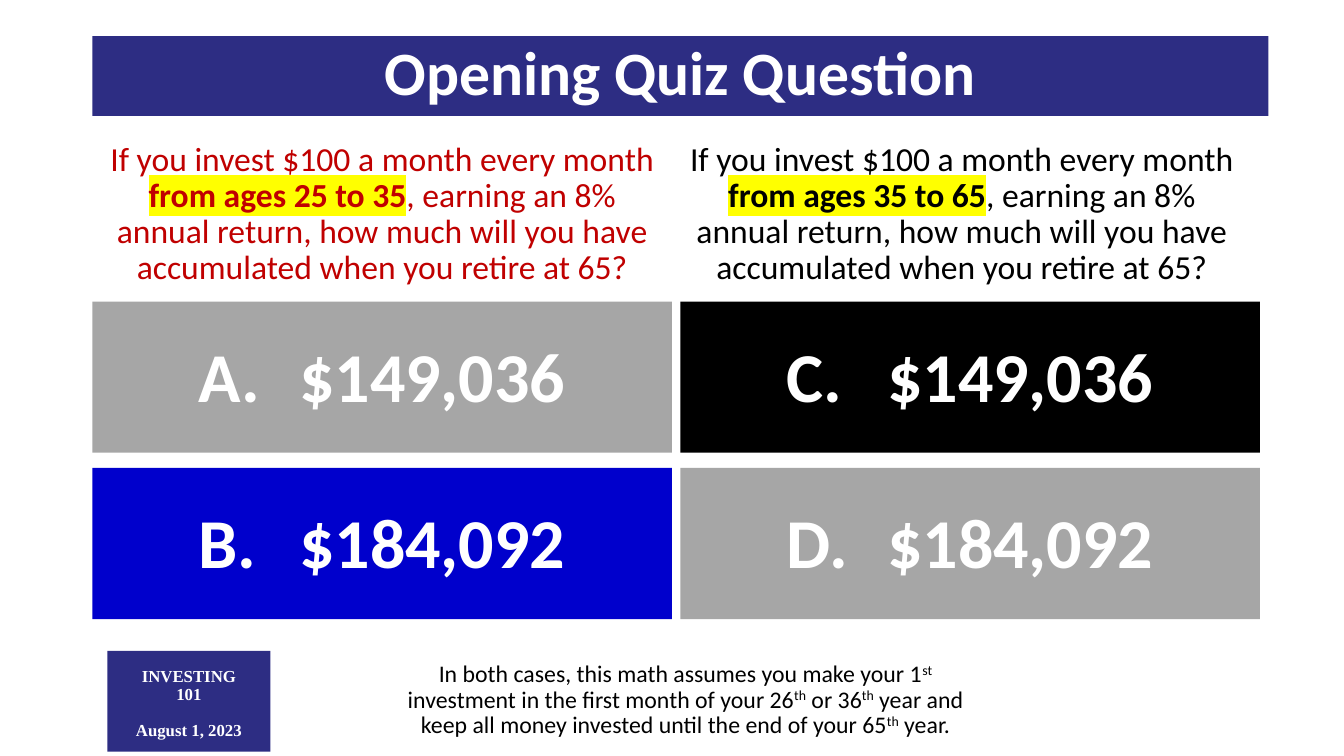
"""Build the opening quiz slide of an investing class."""
from dataclasses import dataclass

from lxml import etree
from pptx import Presentation
from pptx.dml.color import RGBColor
from pptx.enum.shapes import MSO_SHAPE
from pptx.enum.text import MSO_ANCHOR, MSO_AUTO_SIZE, PP_ALIGN
from pptx.oxml.ns import qn
from pptx.shapes.base import BaseShape
from pptx.slide import Slide
from pptx.text.text import _Paragraph
from pptx.util import Inches, Pt

RECT = MSO_SHAPE.RECTANGLE
TOP, MIDDLE = MSO_ANCHOR.TOP, MSO_ANCHOR.MIDDLE
CENTER = PP_ALIGN.CENTER
FIXED = MSO_AUTO_SIZE.NONE
COLS, ROWS = 160, 90
CELL = Inches(1) / 12


@dataclass(frozen=True)
class Theme:
    navy: str = "2D2D83"
    blue: str = "0000CC"
    gray: str = "A6A6A6"
    black: str = "000000"
    white: str = "FFFFFF"
    red: str = "C00000"
    glow: str = "FFFF00"
    sans: str = "Calibri"
    serif: str = "Times New Roman"
    title: int = 44
    answer: int = 50
    body: int = 24
    note: int = 17
    badge: int = 12


THEME = Theme()


@dataclass(frozen=True)
class Box:
    col: float
    row: float
    wide: float
    high: float


@dataclass(frozen=True)
class Style:
    size: int
    color: str
    bold: bool = False
    font: str = THEME.sans
    raised: bool = False


@dataclass(frozen=True)
class Query:
    ages: str
    color: str
    box: Box


@dataclass(frozen=True)
class Answer:
    text: str
    fill: str


QUERIES = (
    Query("25 to 35", THEME.red, Box(11, 16.3, 69, 64.8)),
    Query("35 to 65", THEME.black, Box(80, 16.3, 69, 64.8)),
)
ANSWERS = (
    Answer("A.\t$149,036", THEME.gray),
    Answer("B.\t$184,092", THEME.blue),
    Answer("C.\t$149,036", THEME.black),
    Answer("D.\t$184,092", THEME.gray),
)
FIRST = Box(11, 35.9, 69, 18)
STEP_X, STEP_Y = 70, 19.8
ASK = ("If you invest $100 a month every month |from ages {}|, earning an 8% "
       "annual return, how much will you have accumulated when you retire at 65?")
NOTE = ("In both cases, this math assumes you make your 1|st| investment in the "
        "first month of your 26|th| or 36|th| year and keep all money invested "
        "until the end of your 65|th| year.")


def cells(count: float) -> int:
    return round(count * CELL)


def place(shape: BaseShape, box: Box) -> None:
    shape.left, shape.top = cells(box.col), cells(box.row)
    shape.width, shape.height = cells(box.wide), cells(box.high)


def paint(shape: BaseShape, color: str) -> None:
    shape.fill.solid()
    shape.fill.fore_color.rgb = RGBColor.from_string(color)
    shape.line.fill.background()


def fill_line(para: _Paragraph, text: str, style: Style) -> None:
    para.alignment = CENTER
    para.line_spacing = 0.9
    para.space_before = Pt(0)
    for index, part in enumerate(text.split("|")):
        run = para.add_run()
        run.text = part
        marked = index % 2 == 1
        font = run.font
        font.size, font.name = Pt(style.size), style.font
        font.bold = style.bold or (marked and not style.raised)
        font.color.rgb = RGBColor.from_string(style.color)
        props = run._r.get_or_add_rPr()
        if marked and style.raised:
            props.set("baseline", "30000")
        elif marked:
            glow = etree.Element(qn("a:highlight"))
            etree.SubElement(glow, qn("a:srgbClr"), val=THEME.glow)
            props.find(qn("a:solidFill")).addnext(glow)


def write(shape: BaseShape, lines: tuple[str, ...], style: Style,
          anchor: MSO_ANCHOR, drop: float = 0.05) -> None:
    frame = shape.text_frame
    frame.word_wrap = True
    frame.auto_size = FIXED
    frame.vertical_anchor = anchor
    frame.margin_top = Inches(drop)
    for index, text in enumerate(lines):
        para = frame.add_paragraph() if index else frame.paragraphs[0]
        fill_line(para, text, style)


def add_card(slide: Slide, box: Box, color: str) -> BaseShape:
    card = slide.shapes.add_shape(RECT, 0, 0, 0, 0)
    place(card, box)
    paint(card, color)
    card.shadow.inherit = False
    return card


def add_title(slide: Slide) -> None:
    title = slide.shapes.title
    place(title, Box(11, 4.3, 140, 9.5))
    paint(title, THEME.navy)
    write(title, ("Opening Quiz Question",),
          Style(THEME.title, THEME.white, True), MIDDLE)


def add_query(body: BaseShape, query: Query) -> None:
    place(body, query.box)
    props = body.text_frame.paragraphs[0]._p.get_or_add_pPr()
    props.set("marL", "0")
    props.set("indent", "0")
    etree.SubElement(props, qn("a:buNone"))
    write(body, (ASK.format(query.ages),), Style(THEME.body, query.color), TOP)


def add_answers(slide: Slide) -> None:
    style = Style(THEME.answer, THEME.white, True)
    for index, answer in enumerate(ANSWERS):
        col, row = divmod(index, 2)
        box = Box(FIRST.col + col * STEP_X, FIRST.row + row * STEP_Y,
                  FIRST.wide, FIRST.high)
        write(add_card(slide, box, answer.fill), (answer.text,),
              style, MIDDLE, 0.1)


def add_badge(slide: Slide) -> None:
    badge = add_card(slide, Box(12.8, 77.5, 19.4, 12), THEME.navy)
    style = Style(THEME.badge, THEME.white, True, THEME.serif)
    write(badge, ("INVESTING", "101", "August 1, 2023"), style, MIDDLE, 0.1)
    badge.text_frame.paragraphs[-1].space_before = Pt(13)


def add_note(slide: Slide) -> None:
    note = slide.shapes.add_textbox(0, 0, 0, 0)
    place(note, Box(47.1, 78.2, 69, 7))
    write(note, (NOTE,), Style(THEME.note, THEME.black, raised=True), TOP)


def main() -> None:
    deck = Presentation()
    deck.slide_width, deck.slide_height = cells(COLS), cells(ROWS)
    slide = deck.slides.add_slide(deck.slide_layouts[3])
    add_title(slide)
    for index, query in enumerate(QUERIES, 1):
        add_query(slide.placeholders[index], query)
    add_answers(slide)
    add_badge(slide)
    add_note(slide)
    deck.save("out.pptx")


if __name__ == "__main__":
    main()
